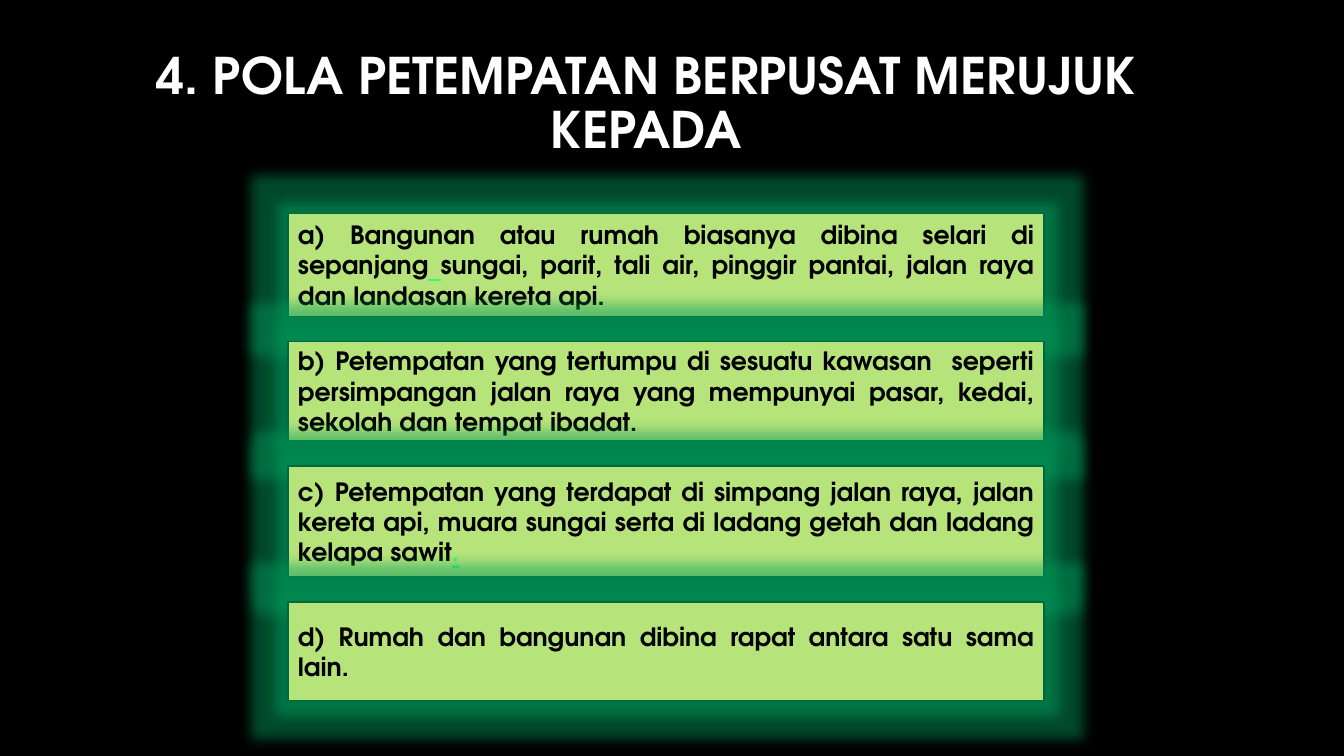
import pptx
import pptx.util
import pptx.dml.color
import pptx.enum.shapes
import pptx.enum.text
import pptx.oxml
from dataclasses import dataclass

Cm = pptx.util.Cm
Pt = pptx.util.Pt


@dataclass(frozen=True)
class Theme:
    font: str = "TeX Gyre Adventor"
    back: str = "000000"
    head: str = "FFFFFF"
    fill: str = "B6E37A"
    edge: str = "00683F"
    ink: str = "000000"
    mark: str = "35FA7F"
    glow: str = "00B76B"
    big: int = 36
    small: int = 18


THEME = Theme()

# Each card: height in cm, then runs of (text, marked)
CARDS = [
    (2.59, [("a) Bangunan atau rumah biasanya dibina selari di sepanjang", False),
            (" ", True),
            ("sungai, parit, tali air, pinggir pantai, jalan raya dan "
             "landasan kereta api.", False)]),
    (2.49, [("b) Petempatan yang tertumpu di sesuatu kawasan  seperti persimpangan "
             "jalan raya yang mempunyai pasar, kedai, sekolah dan tempat ibadat.", False)]),
    (2.79, [("c) Petempatan yang terdapat di simpang jalan raya, jalan kereta api, "
             "muara sungai serta di ladang getah dan ladang kelapa sawit", False),
            (".", True)]),
    (2.49, [("d) Rumah dan bangunan dibina rapat antara satu sama lain.", False)]),
]
LEFT, TOP, WIDTH, GAP = 7.26, 5.38, 19.05, 0.64


def tint(code):
    return pptx.dml.color.RGBColor.from_string(code)


def add_run(para, text, size, color, line=False):
    run = para.add_run()
    run.text = text
    font = run.font
    font.name, font.size, font.bold = THEME.font, Pt(size), True
    font.color.rgb = tint(color)
    font.underline = line


def add_glow(shape):
    shape.shadow.inherit = False
    space = "http://schemas.openxmlformats.org/drawingml/2006/main"
    effects = shape.element.spPr.find("{%s}effectLst" % space)
    glow = f"""<a:glow xmlns:a="{space}" rad="{Pt(18)}">
        <a:srgbClr val="{THEME.glow}"><a:alpha val="40000"/></a:srgbClr></a:glow>"""
    shade = f"""<a:outerShdw xmlns:a="{space}" blurRad="{Pt(4)}" dist="{Pt(3)}"
        dir="5400000" rotWithShape="0">
        <a:srgbClr val="{THEME.back}"><a:alpha val="40000"/></a:srgbClr></a:outerShdw>"""
    for part in (glow, shade):
        effects.append(pptx.oxml.parse_xml(part))


def add_title(slide, text):
    title = slide.shapes.title
    title.left, title.top = Cm(1.68), Cm(1.2)
    title.width, title.height = Cm(29.21), Cm(2.9)
    frame = title.text_frame
    frame.word_wrap = True
    frame.auto_size = pptx.enum.text.MSO_AUTO_SIZE.NONE
    frame.vertical_anchor = pptx.enum.text.MSO_ANCHOR.MIDDLE
    para = frame.paragraphs[0]
    para.alignment = pptx.enum.text.PP_ALIGN.CENTER
    para.line_spacing = 0.9
    add_run(para, text, THEME.big, THEME.head)


def add_card(slide, top, height, runs):
    card = slide.shapes.add_shape(
        pptx.enum.shapes.MSO_SHAPE.RECTANGLE, Cm(LEFT), Cm(top), Cm(WIDTH), Cm(height))
    card.fill.solid()
    card.fill.fore_color.rgb = tint(THEME.fill)
    card.line.color.rgb = tint(THEME.edge)
    card.line.width = Pt(1)
    add_glow(card)
    frame = card.text_frame
    frame.word_wrap = True
    frame.vertical_anchor = pptx.enum.text.MSO_ANCHOR.MIDDLE
    para = frame.paragraphs[0]
    para.alignment = pptx.enum.text.PP_ALIGN.JUSTIFY
    for text, marked in runs:
        add_run(para, text, THEME.small, THEME.mark if marked else THEME.ink, marked)


def main():
    deck = pptx.Presentation()
    deck.slide_width, deck.slide_height = Cm(33.87), Cm(19.05)
    slide = deck.slides.add_slide(deck.slide_layouts[5])

    # Background
    slide.background.fill.solid()
    slide.background.fill.fore_color.rgb = tint(THEME.back)

    # Heading
    add_title(slide, "4. POLA PETEMPATAN BERPUSAT MERUJUK KEPADA")

    # Stacked cards
    top = TOP
    for height, runs in CARDS:
        add_card(slide, top, height, runs)
        top += height + GAP

    deck.save("out.pptx")


if __name__ == "__main__":
    main()
